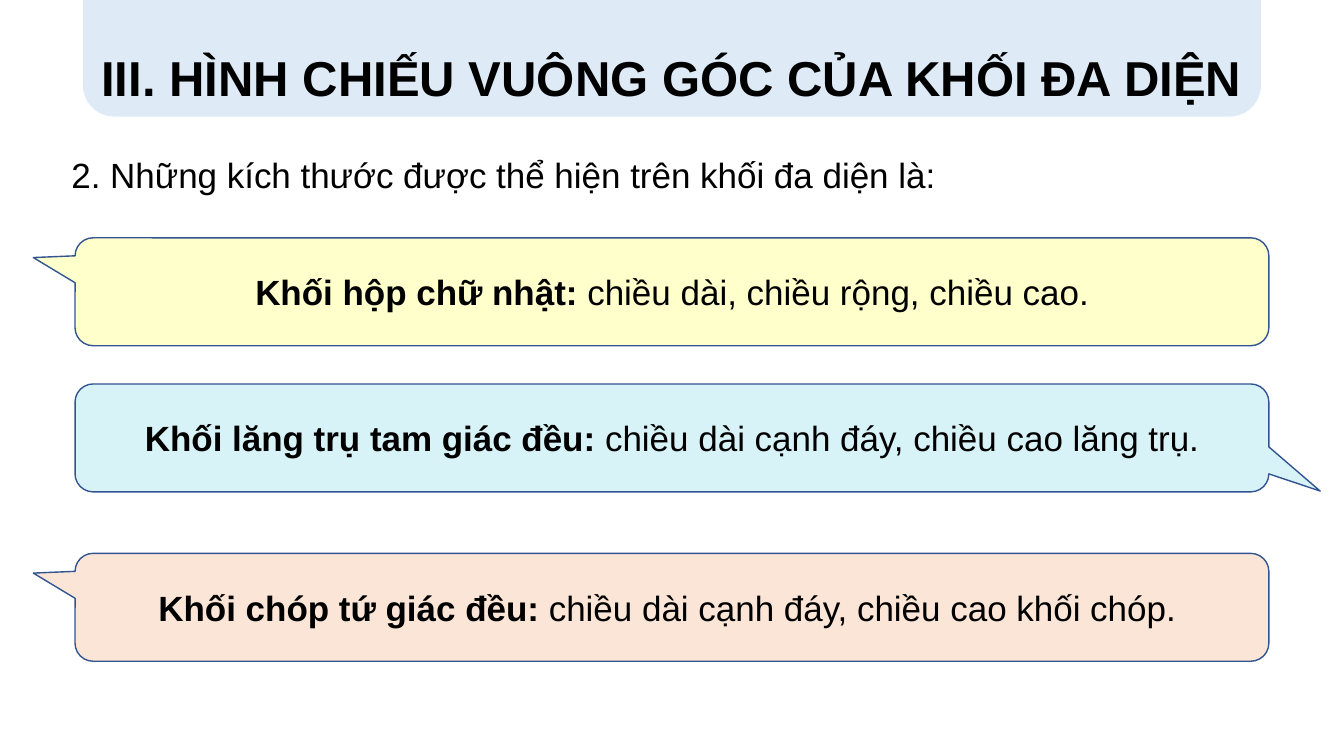
from pptx import Presentation
from pptx.dml.color import RGBColor
from pptx.enum.shapes import MSO_SHAPE as Shape
from pptx.enum.text import MSO_ANCHOR as Anchor, MSO_AUTO_SIZE as AutoSize, PP_ALIGN as Align
from pptx.util import Inches, Pt

WIDTH, HEIGHT = 13.33, 7.5
FONT, INK, OUTLINE, BANNER = "Arial", "000000", "325491", "DEEBF7"
BODY_SIZE, TITLE_SIZE = 25, 35

TITLE = "III. HÌNH CHIẾU VUÔNG GÓC CỦA KHỐI ĐA DIỆN"
QUESTION = "2. Những kích thước được thể hiện trên khối đa diện là:"
TAIL_LEFT, TAIL_RIGHT = (-0.535, -0.317, 0.167), (0.543, 0.493, 0.167)
# top, fill, tail, solid, dimensions
CALLOUTS = [
    (2.36, "FFFFCC", TAIL_LEFT, "Khối hộp chữ nhật: ",
     "chiều dài, chiều rộng, chiều cao."),
    (3.81, "D8F3F8", TAIL_RIGHT, "Khối lăng trụ tam giác đều: ",
     "chiều dài cạnh đáy, chiều cao lăng trụ."),
    (5.49, "FBE5D6", TAIL_LEFT, "Khối chóp tứ giác đều: ",
     "chiều dài cạnh đáy, chiều cao khối chóp. "),
]
BANNER_WIDTH, CALLOUT_WIDTH, CALLOUT_HEIGHT = 11.67, 11.84, 1.07
BANNER_LEFT = (WIDTH - BANNER_WIDTH) / 2
CALLOUT_LEFT = (WIDTH - CALLOUT_WIDTH) / 2


def color(hex_value):
    return RGBColor.from_string(hex_value)


def box(left, top, width, height):
    return [Inches(value) for value in (left, top, width, height)]


def style(paragraph, size, align, bold=None):
    paragraph.alignment = align
    font = paragraph.font
    font.name, font.size, font.bold = FONT, Pt(size), bold
    font.color.rgb = color(INK)


def add_panel(slide, preset, area, fill, line):
    panel = slide.shapes.add_shape(preset, *box(*area))
    panel.shadow.inherit = False
    panel.fill.solid()
    panel.fill.fore_color.rgb = color(fill)
    panel.line.color.rgb = color(line)
    panel.line.width = Pt(1)
    return panel


def add_title(slide):
    banner = add_panel(slide, Shape.ROUNDED_RECTANGLE,
                       (BANNER_LEFT, -0.68, BANNER_WIDTH, 1.83), BANNER, BANNER)
    title = slide.shapes.title
    title._element.addprevious(banner._element)  # banner behind the title
    title.left, title.top, title.width, title.height = box(BANNER_LEFT, 0.42, BANNER_WIDTH, 0.69)
    frame = title.text_frame
    frame.text = TITLE
    frame.auto_size = AutoSize.NONE
    frame.vertical_anchor = Anchor.TOP
    style(frame.paragraphs[0], TITLE_SIZE, Align.CENTER, True)


def add_question(slide):
    frame = slide.shapes.add_textbox(*box(0.61, 1.47, 11.57, 0.52)).text_frame
    frame.word_wrap = True
    frame.text = QUESTION
    style(frame.paragraphs[0], BODY_SIZE, Align.LEFT)


def add_callout(slide, top, fill, tail, solid, dimensions):
    callout = add_panel(slide, Shape.ROUNDED_RECTANGULAR_CALLOUT,
                        (CALLOUT_LEFT, top, CALLOUT_WIDTH, CALLOUT_HEIGHT), fill, OUTLINE)
    for index, value in enumerate(tail):
        callout.adjustments[index] = value
    frame = callout.text_frame
    frame.word_wrap = True
    frame.vertical_anchor = Anchor.MIDDLE
    paragraph = frame.paragraphs[0]
    style(paragraph, BODY_SIZE, Align.CENTER)
    for text, bold in ((solid, True), (dimensions, False)):
        run = paragraph.add_run()
        run.text, run.font.bold = text, bold


def main():
    presentation = Presentation()
    presentation.slide_width, presentation.slide_height = Inches(WIDTH), Inches(HEIGHT)
    slide = presentation.slides.add_slide(presentation.slide_layouts[5])
    add_title(slide)
    add_question(slide)
    for callout in CALLOUTS:
        add_callout(slide, *callout)
    presentation.save("out.pptx")


if __name__ == "__main__":
    main()
